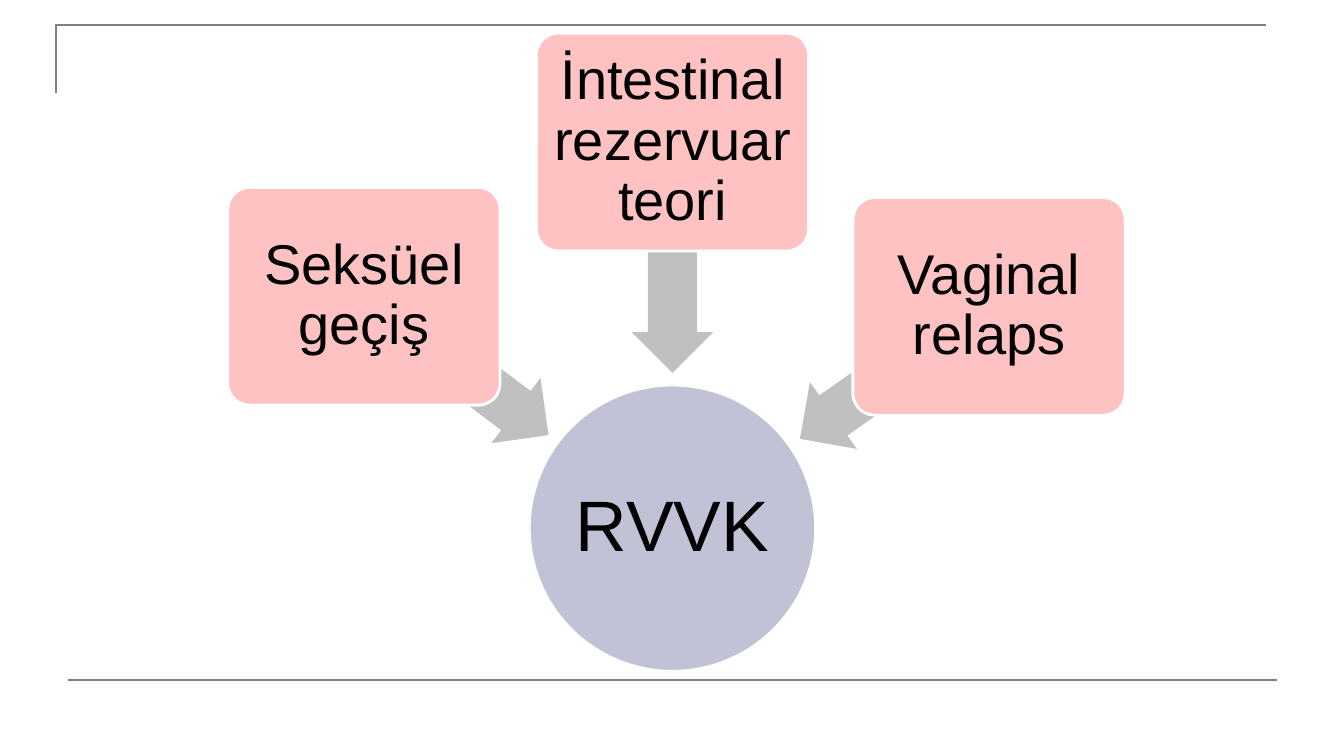
from math import atan2, cos, degrees, hypot, sin

from lxml.etree import SubElement
from pptx import Presentation
from pptx.dml.color import RGBColor
from pptx.enum.shapes import MSO_CONNECTOR, MSO_SHAPE
from pptx.enum.text import MSO_ANCHOR, PP_ALIGN
from pptx.oxml.ns import qn
from pptx.util import Inches, Pt

COLORS = {
    "frame": "808080",
    "outcome": "C2C2D6",
    "cause": "FFC2C2",
    "arrow": "C0C0C0",
    "edge": "FFFFFF",
    "text": "000000",
}


def grid(cells):
    """Length of a number of columns or rows, ten to the inch."""
    return Inches(cells / 10)


class SlideBuilder:
    font_format = {"name": "Arial", "bold": False}
    paragraph_format = {"alignment": PP_ALIGN.CENTER, "line_spacing": 0.9}
    frame_format = {"word_wrap": True, "vertical_anchor": MSO_ANCHOR.MIDDLE}
    sides = ("margin_left", "margin_top", "margin_right", "margin_bottom")

    def __init__(self, slide):
        self.shapes = slide.shapes

    @staticmethod
    def apply(target, values):
        for name, value in values.items():
            setattr(target, name, value)

    @staticmethod
    def color(name):
        return RGBColor.from_string(COLORS[name])

    def stroke(self, line, color, width):
        line.color.rgb = self.color(color)
        line.width = Pt(width)

    def bracket(self, points):
        start, *rest = [(grid(x), grid(y)) for x, y in points]
        builder = self.shapes.build_freeform(*start)
        builder.add_line_segments(rest, close=False)
        outline = builder.convert_to_shape()
        outline.shadow.inherit = False
        outline.fill.background()
        self.stroke(outline.line, "frame", 1.5)

    def rule(self, left, right, y):
        ends = map(grid, (left, y, right, y))
        connector = self.shapes.add_connector(MSO_CONNECTOR.STRAIGHT, *ends)
        self.stroke(connector.line, "frame", 1.5)
        SubElement(connector.element.spPr, qn("a:effectLst"))

    def block(self, kind, center, size, fill, adjustments=()):
        (x, y), (width, height) = center, size
        box = map(grid, (x - width / 2, y - height / 2, width, height))
        block = self.shapes.add_shape(kind, *box)
        block.shadow.inherit = False
        block.fill.solid()
        block.fill.fore_color.rgb = self.color(fill)
        block.line.fill.background()
        for index, value in enumerate(adjustments):
            block.adjustments[index] = value
        return block

    def label(self, block, text, size, inset):
        self.stroke(block.line, "edge", 2)
        frame = block.text_frame
        self.apply(frame, self.frame_format)
        self.apply(frame, dict.fromkeys(self.sides, Inches(inset)))
        paragraph = frame.paragraphs[0]
        self.apply(paragraph, self.paragraph_format)
        run = paragraph.add_run()
        run.text = text
        self.apply(run.font, self.font_format | {"size": Pt(size)})
        run.font.color.rgb = self.color("text")

    def outcome(self, text, center, diameter):
        circle = self.block(MSO_SHAPE.OVAL, center, (diameter, diameter), "outcome")
        self.label(circle, text, 51, 0.04)

    def cause(self, text, center, target):
        # The arrow starts under the middle of the box and aims at the target
        (x, y), (target_x, target_y) = center, target
        length, thickness = 22.9, 8.1
        across, down = target_x - x, target_y - y
        share = length / 2 / hypot(across, down)
        arrow = self.block(
            MSO_SHAPE.LEFT_ARROW,
            (x + share * across, y + share * down),
            (length, thickness), "arrow", (0.6, 0.5),
        )
        arrow.rotation = degrees(atan2(down, across)) + 180
        box = self.block(MSO_SHAPE.ROUNDED_RECTANGLE, center, (27, 21.6), "cause", (0.1,))
        self.label(box, text, 40, 0.08)


def main():
    deck = Presentation()
    deck.slide_width, deck.slide_height = Inches(13.33), Inches(7.5)
    builder = SlideBuilder(deck.slides.add_slide(deck.slide_layouts[6]))

    # Frame lines
    builder.bracket([(5.6, 9.2), (5.6, 2.5), (125.6, 2.5)])
    builder.rule(6.7, 126.7, 67.5)

    # Outcome in the middle
    outcome_center = (66.7, 52.4)
    builder.outcome("RVVK", outcome_center, 28.4)

    # Causes leading to it
    causes = {
        "Seksüel geçiş": (36.1, 29.4),
        "İntestinal rezervuar teori": (66.7, 14.1),
        "Vaginal relaps": (98.1, 30.4),
    }
    for text, center in causes.items():
        builder.cause(text, center, outcome_center)

    deck.save("out.pptx")


if __name__ == "__main__":
    main()
